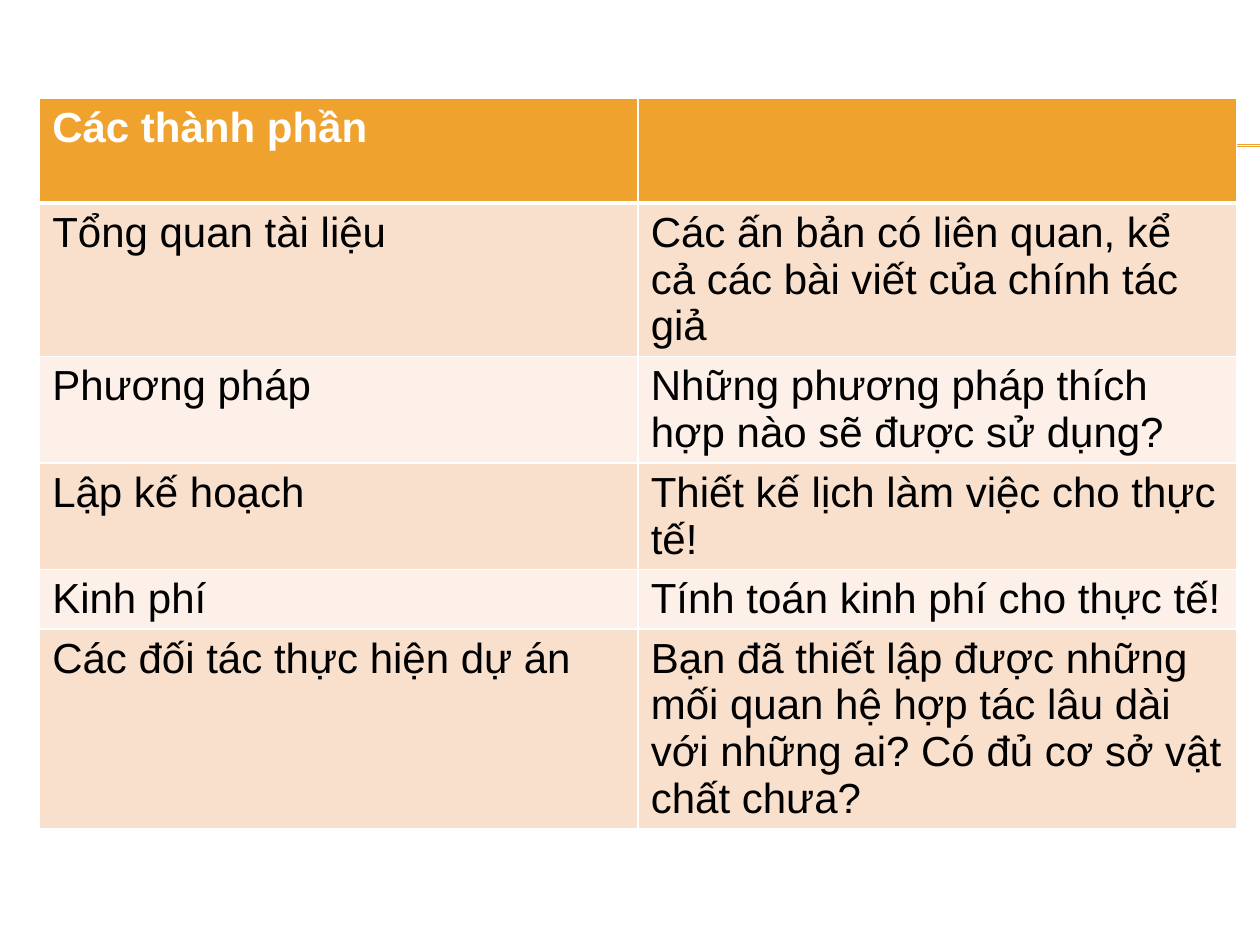
from lxml import etree
from pptx import Presentation
from pptx.dml.color import RGBColor
from pptx.enum.shapes import MSO_CONNECTOR
from pptx.oxml.ns import qn
from pptx.util import Cm, Pt

STRAIGHT = MSO_CONNECTOR.STRAIGHT
ORANGE, WHITE, BLACK = "F0A22E", "FFFFFF", "000000"
BANDS = ("F9E0CD", "FCF0E8")
ROWS = [
    ("Các thành phần", "", 2.11),
    ("Tổng quan tài liệu",
     "Các ấn bản có liên quan, kể cả các bài viết của chính tác giả", 3.1),
    ("Phương pháp", "Những phương pháp thích hợp nào sẽ được sử dụng?", 2.13),
    ("Lập kế hoạch", "Thiết kế lịch làm việc cho thực tế!", 2.13),
    ("Kinh phí", "Tính toán kinh phí cho thực tế!", 1.2),
    ("Các đối tác thực hiện dự án",
     "Bạn đã thiết lập được những mối quan hệ hợp tác lâu dài với những ai? "
     "Có đủ cơ sở vật chất chưa?", 4.01),
]


def color(value):
    return RGBColor.from_string(value)


def set_borders(cell, widths):
    properties = cell._tc.get_or_add_tcPr()
    for side, width in widths.items():
        line = etree.SubElement(properties, qn(f"a:ln{side}"), w=str(Pt(width)))
        fill = etree.SubElement(line, qn("a:solidFill"))
        etree.SubElement(fill, qn("a:srgbClr"), val=WHITE)


def write_cell(cell, text, fill, font_format):
    cell.fill.solid()
    cell.fill.fore_color.rgb = color(fill)
    cell.text = text
    para = cell.text_frame.paragraphs[0]
    for font in [para.font] + [span.font for span in para.runs]:
        for name, value in font_format["values"].items():
            setattr(font, name, value)
        font.color.rgb = color(font_format["color"])


def add_rules(page, left, top, width, gap):
    for offset in (0, gap):
        y = Cm(top + offset)
        rule = page.shapes.add_connector(STRAIGHT, Cm(left), y, Cm(left + width), y)
        rule.line.color.rgb = color(ORANGE)
        rule.line.width = Pt(0.75)
        etree.SubElement(rule._element.spPr, qn("a:effectLst"))


def add_components_table(page, left, top, width):
    height = sum(row[-1] for row in ROWS)
    box = page.shapes.add_table(len(ROWS), 2, Cm(left), Cm(top), Cm(width), Cm(height))
    table = box.table
    for column in table.columns:
        column.width = Cm(width / 2)
    for index, (*texts, row_height) in enumerate(ROWS):
        header = index == 0
        table.rows[index].height = Cm(row_height)
        fill = ORANGE if header else BANDS[(index - 1) % 2]
        font_format = {
            "values": {"name": "Arial", "size": Pt(24), "bold": header},
            "color": WHITE if header else BLACK,
        }
        widths = {"L": 1, "R": 1, "T": 3 if index == 1 else 1, "B": 3 if header else 1}
        for cell, text in zip(table.rows[index].cells, texts):
            set_borders(cell, widths)
            write_cell(cell, text, fill, font_format)


def main():
    deck = Presentation()
    deck.slide_width, deck.slide_height = Cm(25.4), Cm(19.05)
    page = deck.slides.add_slide(deck.slide_layouts[6])
    add_rules(page, left=1.42, top=2.92, width=23.98, gap=0.03)
    add_components_table(page, left=0.8, top=1.98, width=24.13)
    deck.save("out.pptx")


if __name__ == "__main__":
    main()
